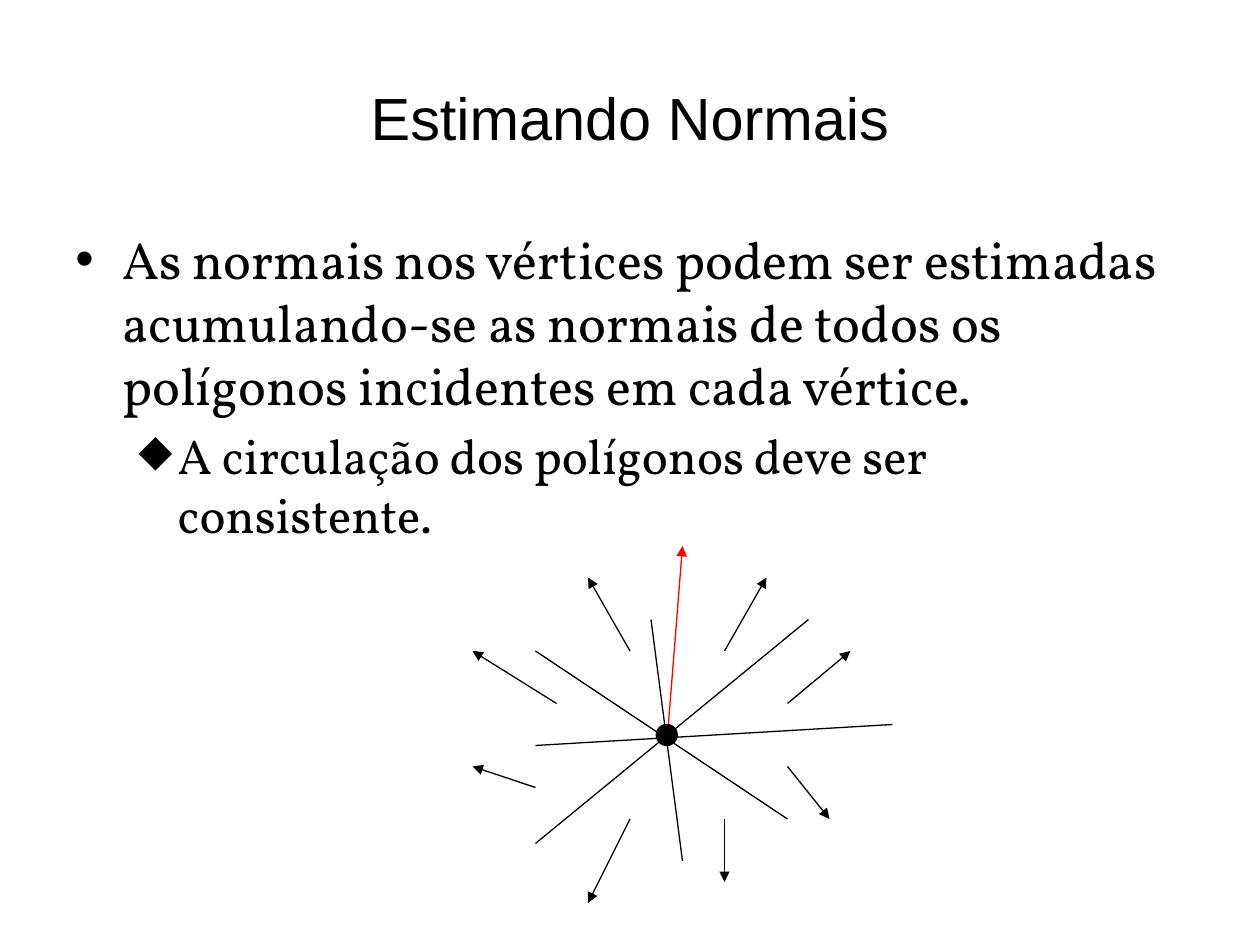
from lxml.etree import SubElement
from pptx import Presentation
from pptx.dml.color import RGBColor
from pptx.enum.shapes import MSO_CONNECTOR as Link, MSO_SHAPE as Shape
from pptx.enum.text import MSO_ANCHOR as Anchor, PP_ALIGN as Align
from pptx.oxml.ns import qn
from pptx.util import Pt

BLACK = RGBColor(0, 0, 0)
RED = RGBColor(255, 0, 0)


class Page:
    """Style and current slide; all lengths in points."""
    head = "Arial"
    body = "Vollkorn"
    line = 0.75

    def __init__(self, deck):
        self.slide = deck.slides.add_slide(deck.slide_layouts[6])
        self.group = self.slide.shapes.add_group_shape()

    def box(self, x, y, w, h, anchor=Anchor.TOP):
        shape = self.slide.shapes.add_textbox(Pt(x), Pt(y), Pt(w), Pt(h))
        frame = shape.text_frame
        frame.word_wrap = True
        frame.vertical_anchor = anchor
        return frame

    def label(self, para, text, size, face):
        para.text = text
        font = para.font
        font.size, font.name = Pt(size), face
        font.color.rgb = BLACK

    def title(self, text, *area):
        para = self.box(*area, Anchor.MIDDLE).paragraphs[0]
        para.alignment = Align.CENTER
        self.label(para, text, 34, self.head)

    def bullets(self, items, *area):
        frame = self.box(*area)
        for i, (text, size, mark, face, left, hang) in enumerate(items):
            para = frame.add_paragraph() if i else frame.paragraphs[0]
            self.label(para, text, size, self.body)
            para.level = i
            para.space_before = Pt(size * 0.2)
            props = para._p.get_or_add_pPr()
            props.set("marL", str(Pt(left)))
            props.set("indent", str(Pt(-hang)))
            # Bullet elements belong before the default run properties
            font = props.find(qn("a:defRPr"))
            for tag, key, value in (("a:buFont", "typeface", face),
                                    ("a:buChar", "char", mark)):
                node = SubElement(props, qn(tag), {key: value})
                if font is not None:
                    font.addprevious(node)

    def stroke(self, x1, y1, x2, y2, color=BLACK, arrow=False):
        link = self.group.shapes.add_connector(
            Link.STRAIGHT, Pt(x1), Pt(y1), Pt(x2), Pt(y2))
        link.line.color.rgb = color
        link.line.width = Pt(self.line)
        props = link._element.spPr
        SubElement(props, qn("a:effectLst"))
        if arrow:
            SubElement(props.find(qn("a:ln")), qn("a:tailEnd"),
                       {"type": "triangle"})

    def dot(self, x, y, size):
        shape = self.group.shapes.add_shape(
            Shape.OVAL, Pt(x), Pt(y), Pt(size), Pt(size))
        shape.shadow.inherit = False
        shape.fill.solid()
        shape.fill.fore_color.rgb = BLACK
        shape.line.color.rgb = BLACK
        shape.line.width = Pt(self.line)


ITEMS = [
    ("As normais nos vértices podem ser estimadas acumulando-se as normais "
     "de todos os polígonos incidentes em cada vértice.",
     30, "•", Page.head, 27, 27),
    ("A circulação dos polígonos deve ser consistente.",
     28, "⬥", Page.body, 58.5, 22.5),
]
# Polygon edges through the vertex: x1, y1, x2, y2
EDGES = [(306, 372, 450, 468), (306, 482, 462, 354),
         (372, 354, 390, 492), (306, 426, 510, 414)]
# Polygon normals, from base to tip
NORMALS = [(450, 402, 486, 372), (450, 438, 474, 468),
           (414, 468, 414, 504), (306, 450, 270, 438),
           (318, 402, 270, 372), (360, 372, 336, 330),
           (360, 468, 336, 516), (414, 372, 438, 330)]


def main():
    deck = Presentation()
    deck.slide_width, deck.slide_height = Pt(720), Pt(540)
    page = Page(deck)

    # Text
    page.title("Estimando Normais", 36, 21.6, 648, 90)
    page.bullets(ITEMS, 36, 126, 648, 356.4)

    # Vertex with its edges and normals
    for edge in EDGES:
        page.stroke(*edge)
    page.stroke(381, 426, 390, 312, RED, arrow=True)
    for normal in NORMALS:
        page.stroke(*normal, arrow=True)
    page.dot(375, 414, 12)

    deck.save("out.pptx")


if __name__ == "__main__":
    main()
